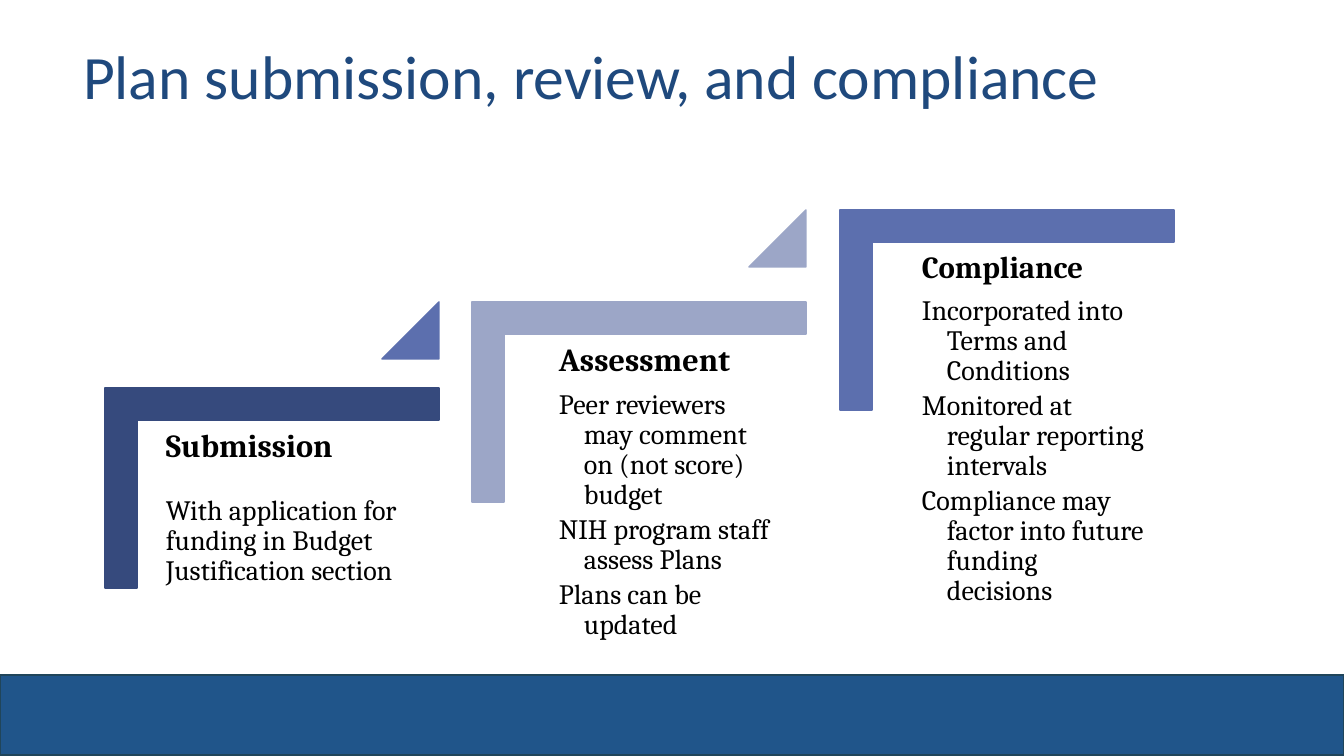
from pptx import Presentation
from pptx.dml.color import RGBColor
from pptx.enum.shapes import MSO_SHAPE
from pptx.enum.text import MSO_ANCHOR, MSO_AUTO_SIZE, PP_ALIGN
from pptx.util import Emu, Pt

TITLE_BLUE = RGBColor(0x1F, 0x49, 0x7D)
BAND_BLUE = RGBColor(0x20, 0x55, 0x8A)
BAND_EDGE = RGBColor(0x20, 0x45, 0x5A)
NAVY = RGBColor(0x36, 0x4A, 0x7D)
INDIGO = RGBColor(0x5C, 0x6F, 0xAE)
LAVENDER = RGBColor(0x9C, 0xA6, 0xC7)
BLACK = RGBColor(0, 0, 0)

SLIDE_WIDTH, SLIDE_HEIGHT = 1344, 756
STEP_WIDTH, STEP_HEIGHT, BAR = 334, 200, 32
ARROW = 57
HANGING = 25


def px(length):
    return Emu(round(length * 914400 / 100.8))


def write(paragraph, text, size, font="Cambria", color=BLACK, bold=False,
          before=None, hanging=0):
    if hanging:
        properties = paragraph._p.get_or_add_pPr()
        properties.set("marL", str(px(hanging)))
        properties.set("indent", str(-px(hanging)))
    paragraph.alignment = PP_ALIGN.LEFT
    paragraph.line_spacing = 0.9
    if before is not None:
        paragraph.space_before = Pt(before)
    run = paragraph.add_run()
    run.text = text
    run.font.name = font
    run.font.size = Pt(size)
    run.font.bold = bold
    run.font.color.rgb = color


class StepSlide:
    def __init__(self, presentation):
        self.slide = presentation.slides.add_slide(presentation.slide_layouts[5])
        self.shapes = self.slide.shapes

    def title(self, text, left, top, width, height):
        shape = self.shapes.title
        shape.left, shape.top = px(left), px(top)
        shape.width, shape.height = px(width), px(height)
        frame = shape.text_frame
        frame.word_wrap = True
        frame.auto_size = MSO_AUTO_SIZE.NONE
        frame.vertical_anchor = MSO_ANCHOR.BOTTOM
        write(frame.paragraphs[0], text, 44, font="Calibri", color=TITLE_BLUE)

    def block(self, kind, left, top, width, height, fill, edge=None, weight=1.1):
        shape = self.shapes.add_shape(kind, px(left), px(top), px(width), px(height))
        shape.shadow.inherit = False
        shape.fill.solid()
        shape.fill.fore_color.rgb = fill
        shape.line.color.rgb = edge or fill
        shape.line.width = Pt(weight)
        return shape

    def corner(self, left, top, color):
        # The frame stands upright and is turned a quarter about its centre
        shift = (STEP_WIDTH - STEP_HEIGHT) // 2
        shape = self.block(MSO_SHAPE.CORNER, left + shift, top - shift,
                           STEP_HEIGHT, STEP_WIDTH, color)
        shape.rotation = 90
        shape.adjustments[0] = shape.adjustments[1] = 0.16

    def arrow(self, right, top, color):
        shape = self.block(MSO_SHAPE.ISOSCELES_TRIANGLE, right - ARROW, top,
                           ARROW, ARROW, color)
        shape.adjustments[0] = 1

    def text(self, left, top, width, heading, size, points, gap, hanging):
        box = self.shapes.add_textbox(px(left), px(top), px(width), px(264))
        frame = box.text_frame
        frame.word_wrap = True
        frame.margin_left = frame.margin_right = px(10)
        frame.margin_top = frame.margin_bottom = px(10)
        write(frame.paragraphs[0], heading, size, bold=True)
        for index, point in enumerate(points):
            write(frame.add_paragraph(), point, 20,
                  before=3 if index else gap, hanging=hanging)


# left, top, colour, arrow colour, text offset, text width,
# heading, heading size, points, gap under heading, hanging indent
STEPS = [
    (105, 388, NAVY, INDIGO, 51, 290, "Submission", 23,
     ["With application for funding in Budget Justification section"], 22.5, 0),
    (472, 302, LAVENDER, LAVENDER, 77, 240, "Assessment", 23,
     ["Peer reviewers may comment on (not score) budget",
      "NIH program staff assess Plans",
      "Plans can be updated"], 8.1, HANGING),
    (840, 210, INDIGO, None, 72, 245, "Compliance", 22,
     ["Incorporated into Terms and Conditions",
      "Monitored at regular reporting intervals",
      "Compliance may factor into future funding decisions"], 7.7, HANGING),
]


def main():
    presentation = Presentation()
    presentation.slide_width = px(SLIDE_WIDTH)
    presentation.slide_height = px(SLIDE_HEIGHT)
    page = StepSlide(presentation)

    # Title and footer band
    page.title("Plan submission, review, and compliance", 73, -31, 1089, 149)
    page.block(MSO_SHAPE.RECTANGLE, 0, 675, SLIDE_WIDTH, 80,
               BAND_BLUE, BAND_EDGE, 1.5)

    # Rising steps, each arrow level with the top of the next step
    for index, step in enumerate(STEPS):
        left, top, color, arrow_color, offset, width, *content = step
        page.corner(left, top, color)
        page.text(left + offset, top + BAR, width, *content)
        if arrow_color:
            page.arrow(left + STEP_WIDTH, STEPS[index + 1][1], arrow_color)

    presentation.save("out.pptx")


if __name__ == "__main__":
    main()
